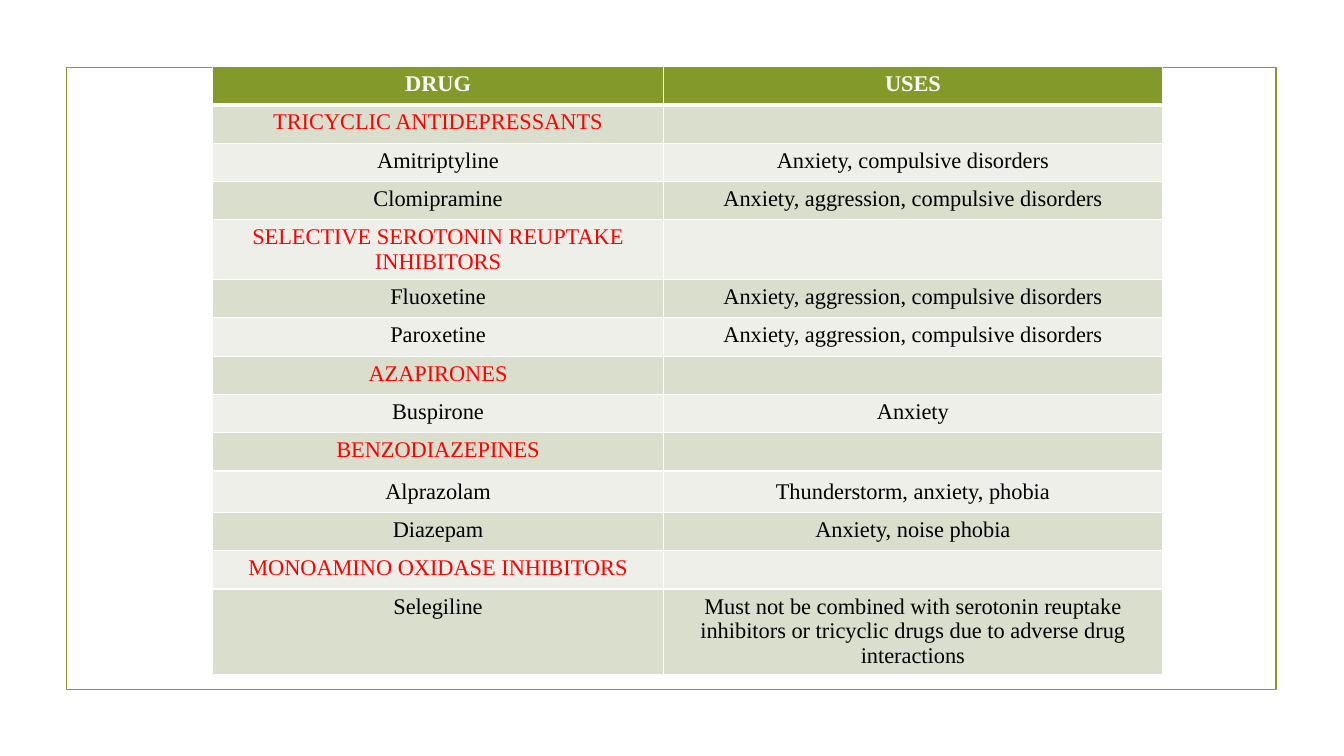
"""Build a slide with a table of behavioural drugs and their uses."""
import lxml.etree
import pptx
import pptx.dml.color
import pptx.enum.shapes
import pptx.enum.text
import pptx.oxml
import pptx.oxml.ns
import pptx.util

COLORS = {"green": "83992A", "dark band": "D9DECD", "light band": "EDEFE8",
          "class": "FF0000", "text": "000000", "white": "FFFFFF"}
ROWS = [
    ("DRUG", "USES"),
    ("TRICYCLIC ANTIDEPRESSANTS", ""),
    ("Amitriptyline", "Anxiety, compulsive disorders"),
    ("Clomipramine", "Anxiety, aggression, compulsive disorders"),
    ("SELECTIVE SEROTONIN REUPTAKE INHIBITORS", ""),
    ("Fluoxetine", "Anxiety, aggression, compulsive disorders"),
    ("Paroxetine", "Anxiety, aggression, compulsive disorders"),
    ("AZAPIRONES", ""),
    ("Buspirone", "Anxiety"),
    ("BENZODIAZEPINES", ""),
    ("Alprazolam", "Thunderstorm, anxiety, phobia"),
    ("Diazepam", "Anxiety, noise phobia"),
    ("MONOAMINO OXIDASE INHIBITORS", ""),
    ("Selegiline", "Must not be combined with serotonin reuptake inhibitors "
                   "or tricyclic drugs due to adverse drug interactions"),
]
COLUMN_WIDTHS = (4.47, 4.95)
ROW_HEIGHT = 0.38
SPECIAL_HEIGHTS = {"Alprazolam": 0.41, "Selegiline": 0.85}
FONT_SIZE = 16


def rgb(name):
    return pptx.dml.color.RGBColor.from_string(COLORS[name])


def add_borders(cell, widths):
    tc_pr = cell._tc.get_or_add_tcPr()
    for i, (side, width) in enumerate(widths.items()):
        ln = pptx.oxml.parse_xml(
            f'<a:ln{side} {pptx.oxml.ns.nsdecls("a")} w="{pptx.util.Pt(width)}">'
            f'<a:solidFill><a:srgbClr val="{COLORS["white"]}"/></a:solidFill>'
            f'</a:ln{side}>')
        tc_pr.insert(i, ln)


prs = pptx.Presentation()
prs.slide_width = pptx.util.Inches(13.33)
prs.slide_height = pptx.util.Inches(7.5)
s = prs.slides.add_slide(prs.slide_layouts[6])

frame = s.shapes.add_shape(
    pptx.enum.shapes.MSO_SHAPE.RECTANGLE,
    *(pptx.util.Inches(v) for v in (0.66, 0.67, 12, 6.17)))
frame.shadow.inherit = False
frame.fill.background()
frame.line.color.rgb = rgb("green")
frame.line.width = pptx.util.Pt(1.25)

heights = [SPECIAL_HEIGHTS.get(drug, ROW_HEIGHT) for drug, uses in ROWS]
table = s.shapes.add_table(
    len(ROWS), len(COLUMN_WIDTHS), pptx.util.Inches(2.11), pptx.util.Inches(0.66),
    pptx.util.Inches(sum(COLUMN_WIDTHS)), pptx.util.Inches(sum(heights))).table
for column, width in zip(table.columns, COLUMN_WIDTHS):
    column.width = pptx.util.Inches(width)

for r, (texts, height) in enumerate(zip(ROWS, heights)):
    table.rows[r].height = pptx.util.Inches(height)
    if r == 0:
        fill, color = "green", "white"
    else:
        fill = "dark band" if r % 2 else "light band"
        color = "text" if texts[1] else "class"
    for c, text in enumerate(texts):
        cell = table.cell(r, c)
        cell.text = text
        cell.fill.solid()
        cell.fill.fore_color.rgb = rgb(fill)
        add_borders(cell, {"L": 1, "R": 1, "T": 3 if r == 1 else 1, "B": 3 if r == 0 else 1})
        p = cell.text_frame.paragraphs[0]
        p.alignment = pptx.enum.text.PP_ALIGN.CENTER
        p.font.name = "Times New Roman"
        p.font.size = pptx.util.Pt(FONT_SIZE)
        p.font.bold = r == 0
        p.font.color.rgb = rgb(color)
        if not text:
            lxml.etree.SubElement(p._p, pptx.oxml.ns.qn("a:endParaRPr"), sz=str(FONT_SIZE * 100))
        if texts[0] == "Alprazolam":
            cell.vertical_anchor = pptx.enum.text.MSO_ANCHOR.MIDDLE
            cell.margin_left = cell.margin_right = pptx.util.Inches(0.13)
            cell.margin_top = cell.margin_bottom = pptx.util.Inches(0.08)

prs.save("out.pptx")
